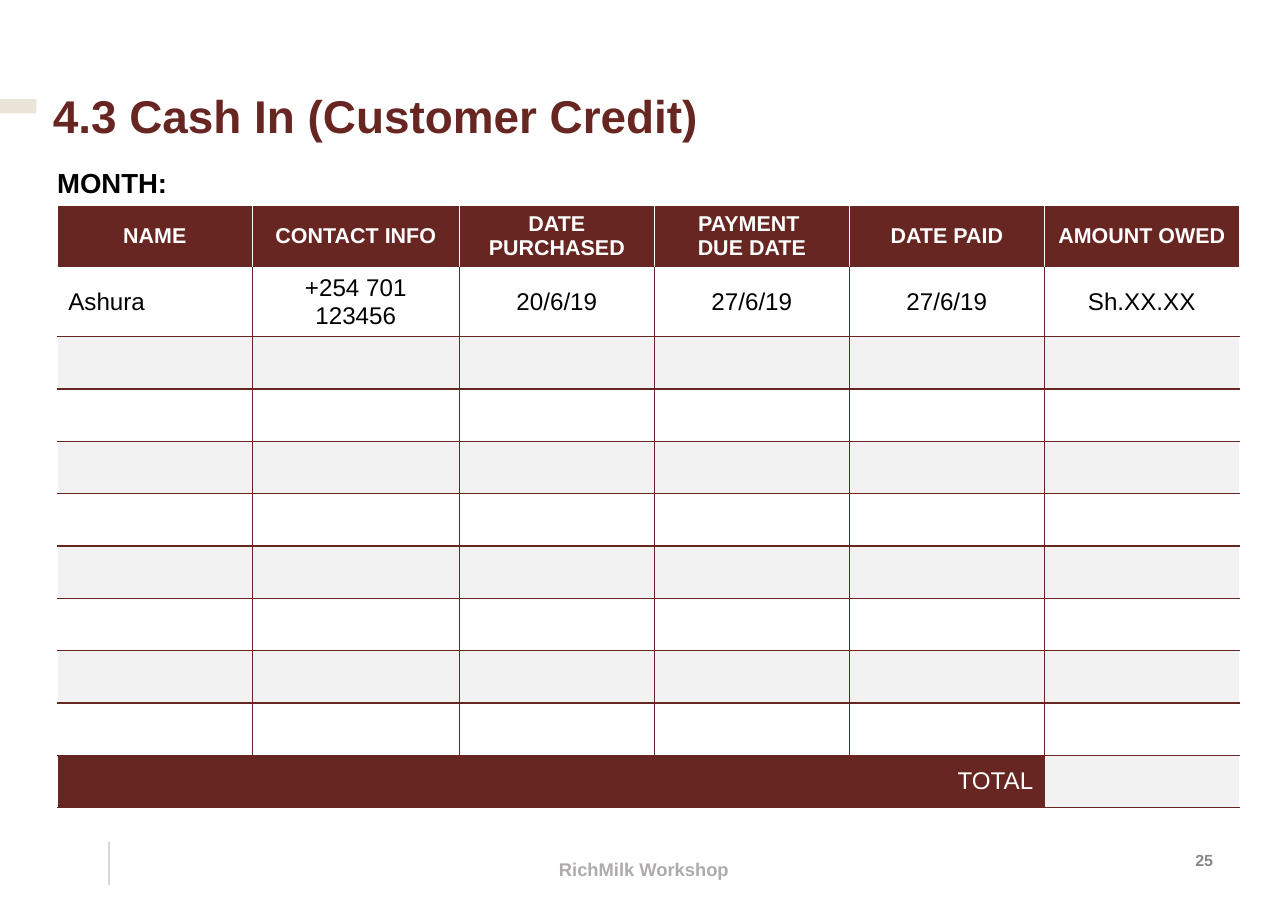
from pptx import Presentation
from pptx.dml.color import RGBColor
from pptx.enum.shapes import MSO_CONNECTOR, MSO_SHAPE
from pptx.enum.text import MSO_ANCHOR, PP_ALIGN
from pptx.oxml.ns import qn
from pptx.util import Inches, Pt
from lxml.etree import SubElement

MAROON, WHITE, BLACK, BAND = "682622", "FFFFFF", "000000", "F2F2F2"
HEADERS = ["NAME", "CONTACT INFO", "DATE PURCHASED", "PAYMENT \vDUE DATE",
           "DATE PAID", "AMOUNT OWED"]
SAMPLE = ["Ashura", "+254 701 123456", "20/6/19", "27/6/19", "27/6/19", "Sh.XX.XX"]
COL_WIDTHS = [1.77, 1.88, 1.77, 1.77, 1.77, 1.77]
HEADER_H, SAMPLE_H, EMPTY_ROWS = 0.57, 0.6, 8


def rgb(color):
    return RGBColor.from_string(color)


def write(tf, text, size, color, bold=False, align=PP_ALIGN.LEFT):
    tf.text = text
    p = tf.paragraphs[0]
    p.alignment = align
    for r in p.runs:
        r.font.name = "Arial"
        r.font.size = Pt(size)
        r.font.bold = bold
        r.font.color.rgb = rgb(color)
    return p


def add_text(s, box, text, size, color, align=PP_ALIGN.LEFT,
             anchor=MSO_ANCHOR.TOP, insets=(0.1, 0.05, 0.1, 0.05)):
    tf = s.shapes.add_textbox(*map(Inches, box)).text_frame
    tf.word_wrap = True
    tf.vertical_anchor = anchor
    (tf.margin_left, tf.margin_top,
     tf.margin_right, tf.margin_bottom) = map(Inches, insets)
    return write(tf, text, size, color, True, align)


def add_borders(cell, sides):
    """Draw 1 pt cell borders; sides maps L, R, T, B to colours."""
    tc_pr = cell._tc.get_or_add_tcPr()
    for side in "LRTB":
        if side in sides:
            ln = SubElement(tc_pr, qn(f"a:ln{side}"), w=str(Pt(1)))
            fill = SubElement(ln, qn("a:solidFill"))
            SubElement(fill, qn("a:srgbClr"), val=sides[side])


def add_heading(s, x, y, w, h):
    # Accent bar at the slide edge
    bar = s.shapes.add_shape(MSO_SHAPE.RECTANGLE, Inches(x - 0.28), Inches(y + 0.74),
                             Inches(0.33), Inches(0.13))
    bar.shadow.inherit = False
    bar.fill.solid()
    bar.fill.fore_color.rgb = rgb("EAE4D9")
    bar.line.fill.background()

    # Title and month label
    p = add_text(s, (x, y, w, h), "4.3 Cash In (Customer Credit)", 30, MAROON,
                 insets=(0.2, 0.62, 0.1, 0))
    p.line_spacing = 1.1
    add_text(s, (x + 0.14, y + 1.3, 3.91, 0.4), "MONTH:", 18, BLACK)


def add_credit_table(s, x, y, w, h):
    n_rows, n_cols = EMPTY_ROWS + 3, len(COL_WIDTHS)
    last_row, last_col = n_rows - 1, n_cols - 1
    table = s.shapes.add_table(n_rows, n_cols, *map(Inches, (x, y, w, h))).table
    table.first_row = table.horz_banding = False

    # Grid sizes
    for col, width in zip(table.columns, COL_WIDTHS):
        col.width = Inches(width)
    row_h = (h - HEADER_H - SAMPLE_H) / (n_rows - 2)
    for row, height in zip(table.rows, [HEADER_H, SAMPLE_H] + [row_h] * (n_rows - 2)):
        row.height = Inches(height)

    # Borders and banded fills
    for i in range(n_rows):
        for j in range(n_cols):
            cell = table.cell(i, j)
            cell.vertical_anchor = MSO_ANCHOR.MIDDLE
            total = i == last_row and j < last_col
            if i == 0:
                sides = dict.fromkeys("LRT", WHITE)
            else:
                sides = {"B": MAROON}
                if i > 1:
                    sides["T"] = MAROON
                if j > 0:
                    sides["L"] = MAROON
                if j < last_col:
                    sides["R"] = MAROON
            add_borders(cell, sides)
            cell.fill.solid()
            cell.fill.fore_color.rgb = rgb(
                MAROON if i == 0 or total else WHITE if i % 2 else BAND)

    # Wording
    for j, (header, value) in enumerate(zip(HEADERS, SAMPLE)):
        write(table.cell(0, j).text_frame, header, 14, WHITE, True, PP_ALIGN.CENTER)
        write(table.cell(1, j).text_frame, value, 15.8, BLACK,
              align=PP_ALIGN.CENTER if j else PP_ALIGN.LEFT)
    total_cell = table.cell(last_row, 0)
    total_cell.merge(table.cell(last_row, last_col - 1))
    write(total_cell.text_frame, "TOTAL", 15.8, WHITE, align=PP_ALIGN.RIGHT)


def add_footer(s, x, y, w, h):
    # Divider
    line = s.shapes.add_connector(MSO_CONNECTOR.STRAIGHT, Inches(x + 0.99), Inches(y + 0.15),
                                  Inches(x + 0.99), Inches(y + 0.54))
    line.line.color.rgb = rgb("D8D8D8")
    line.line.width = Pt(0.75)
    SubElement(line._element.spPr, qn("a:effectLst"))

    # Workshop name and page number
    add_text(s, (x + (w - 2.94) / 2, y + 0.1, 2.94, 0.55), "RichMilk Workshop", 12, "AEABAB",
             PP_ALIGN.CENTER, MSO_ANCHOR.MIDDLE, (0.1, 0.05, 0.1, 0))
    add_text(s, (x + w - 1.01, y + 0.12, 0.5, 0.4), "25", 10.5, "888888",
             PP_ALIGN.CENTER, MSO_ANCHOR.MIDDLE)


def main():
    prs = Presentation()
    prs.slide_width, prs.slide_height = Inches(11.69), Inches(8.27)
    s = prs.slides.add_slide(prs.slide_layouts[6])
    add_heading(s, 0.28, 0.16, 10.97, 1.13)
    add_credit_table(s, 0.52, 1.86, sum(COL_WIDTHS), 5.45)
    add_footer(s, 0, 7.49, 11.69, 0.78)
    prs.save("out.pptx")


if __name__ == "__main__":
    main()
